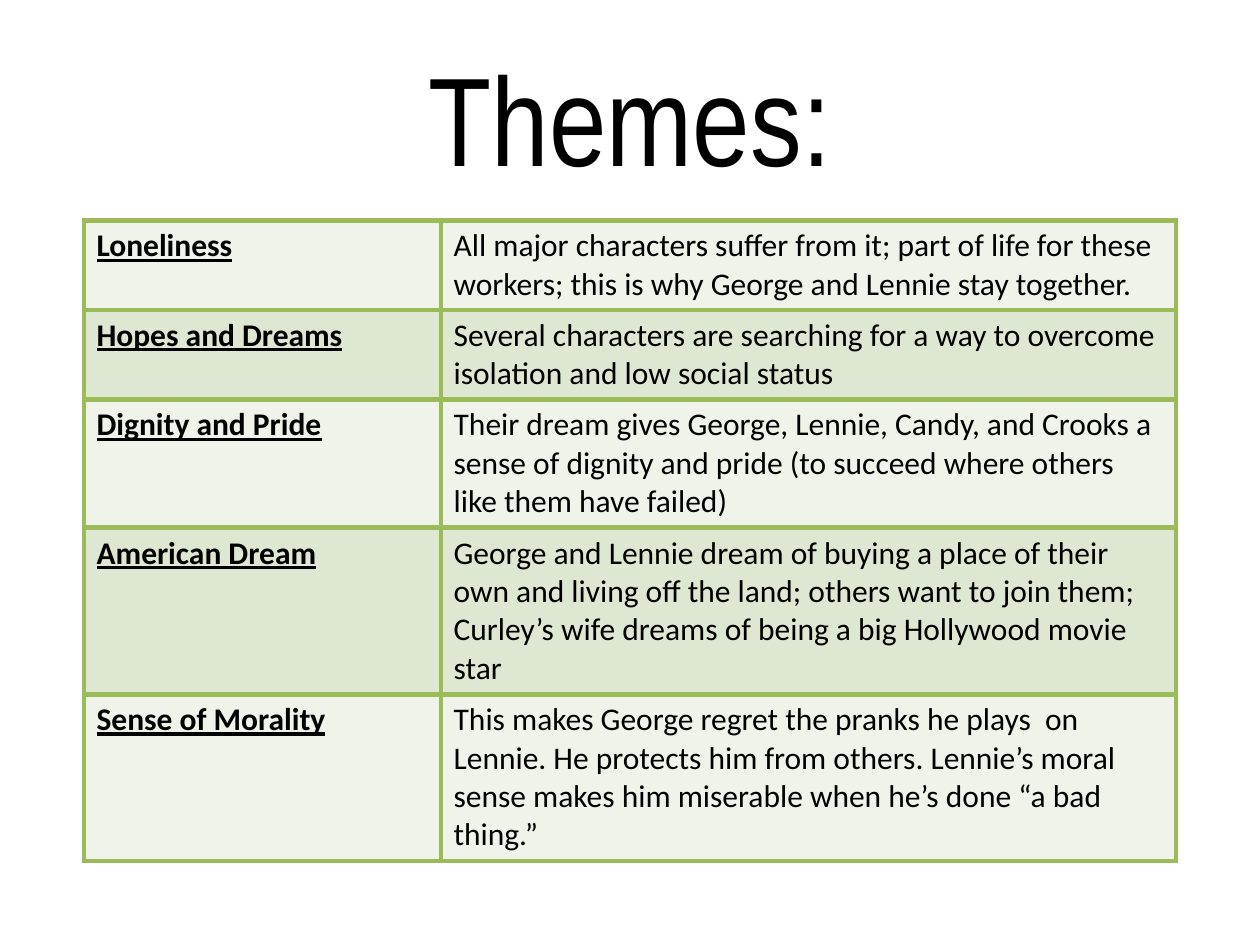
from lxml.etree import SubElement
from pptx import Presentation
from pptx.dml.color import RGBColor
from pptx.enum.text import MSO_ANCHOR, PP_ALIGN
from pptx.oxml.ns import qn
from pptx.util import Pt

COLORS = {
    "text": "000000",
    "border": "9BBB59",
    "light_row": "EFF3EA",
    "dark_row": "DEE7D1",
}

THEMES = [
    # theme, explanation, lines the explanation takes
    ("Loneliness",
     "All major characters suffer from it; part of life for these workers; "
     "this is why George and Lennie stay together.", 2),
    ("Hopes and Dreams",
     "Several characters are searching for a way to overcome isolation "
     "and low social status", 2),
    ("Dignity and Pride",
     "Their dream gives George, Lennie, Candy, and Crooks a sense of dignity "
     "and pride (to succeed where others like them have failed)", 3),
    ("American Dream",
     "George and Lennie dream of buying a place of their own and living off "
     "the land; others want to join them; Curley’s wife dreams of being "
     "a big Hollywood movie star", 4),
    ("Sense of Morality",
     "This makes George regret the pranks he plays  on Lennie. He protects him "
     "from others. Lennie’s moral sense makes him miserable when he’s done "
     "“a bad thing.”", 4),
]
LINE_HEIGHT = 22
CELL_PADDING = 7.2
THEME_COLUMN_SHARE = 0.327


def write_text(text_frame, text, size=18, font_name="Calibri", bold=False,
               underline=False, alignment=PP_ALIGN.LEFT):
    paragraph = text_frame.paragraphs[0]
    paragraph.text = text
    paragraph.alignment = alignment
    font = paragraph.runs[0].font
    font.name = font_name
    font.size = Pt(size)
    font.bold = bold
    font.underline = underline
    font.color.rgb = RGBColor.from_string(COLORS["text"])


def format_cell(cell, fill, border_width=3):
    """Border all four sides, then fill, in the order the schema asks for."""
    properties = cell._tc.get_or_add_tcPr()
    for side in ("a:lnL", "a:lnR", "a:lnT", "a:lnB"):
        line = SubElement(properties, qn(side), w=str(Pt(border_width)))
        solid_fill = SubElement(line, qn("a:solidFill"))
        SubElement(solid_fill, qn("a:srgbClr"), val=COLORS["border"])
    cell.fill.solid()
    cell.fill.fore_color.rgb = RGBColor.from_string(COLORS[fill])


def place_title(slide, left, top, width, height):
    title = slide.shapes.title
    title.left, title.top = Pt(left), Pt(top)
    title.width, title.height = Pt(width), Pt(height)
    title.text_frame.vertical_anchor = MSO_ANCHOR.MIDDLE
    write_text(title.text_frame, "Themes:", size=72, font_name="Arial Narrow",
               alignment=PP_ALIGN.CENTER)


def add_themes_table(slide, left, top, width):
    heights = [lines * LINE_HEIGHT + CELL_PADDING for _, _, lines in THEMES]
    frame = slide.shapes.add_table(len(THEMES), 2, Pt(left), Pt(top),
                                   Pt(width), Pt(sum(heights)))
    table = frame.table
    table.first_row = False
    table.columns[0].width = Pt(width * THEME_COLUMN_SHARE)
    table.columns[1].width = Pt(width * (1 - THEME_COLUMN_SHARE))
    for index, (theme, explanation, _) in enumerate(THEMES):
        table.rows[index].height = Pt(heights[index])
        theme_cell, explanation_cell = table.rows[index].cells
        write_text(theme_cell.text_frame, theme, bold=True, underline=True)
        write_text(explanation_cell.text_frame, explanation)
        for cell in (theme_cell, explanation_cell):
            format_cell(cell, "dark_row" if index % 2 else "light_row")


def main():
    presentation = Presentation()
    presentation.slide_width, presentation.slide_height = Pt(720), Pt(540)
    slide = presentation.slides.add_slide(presentation.slide_layouts[5])
    place_title(slide, left=36, top=21.6, width=648, height=90)
    add_themes_table(slide, left=48, top=126, width=624)
    presentation.save("out.pptx")


if __name__ == "__main__":
    main()
